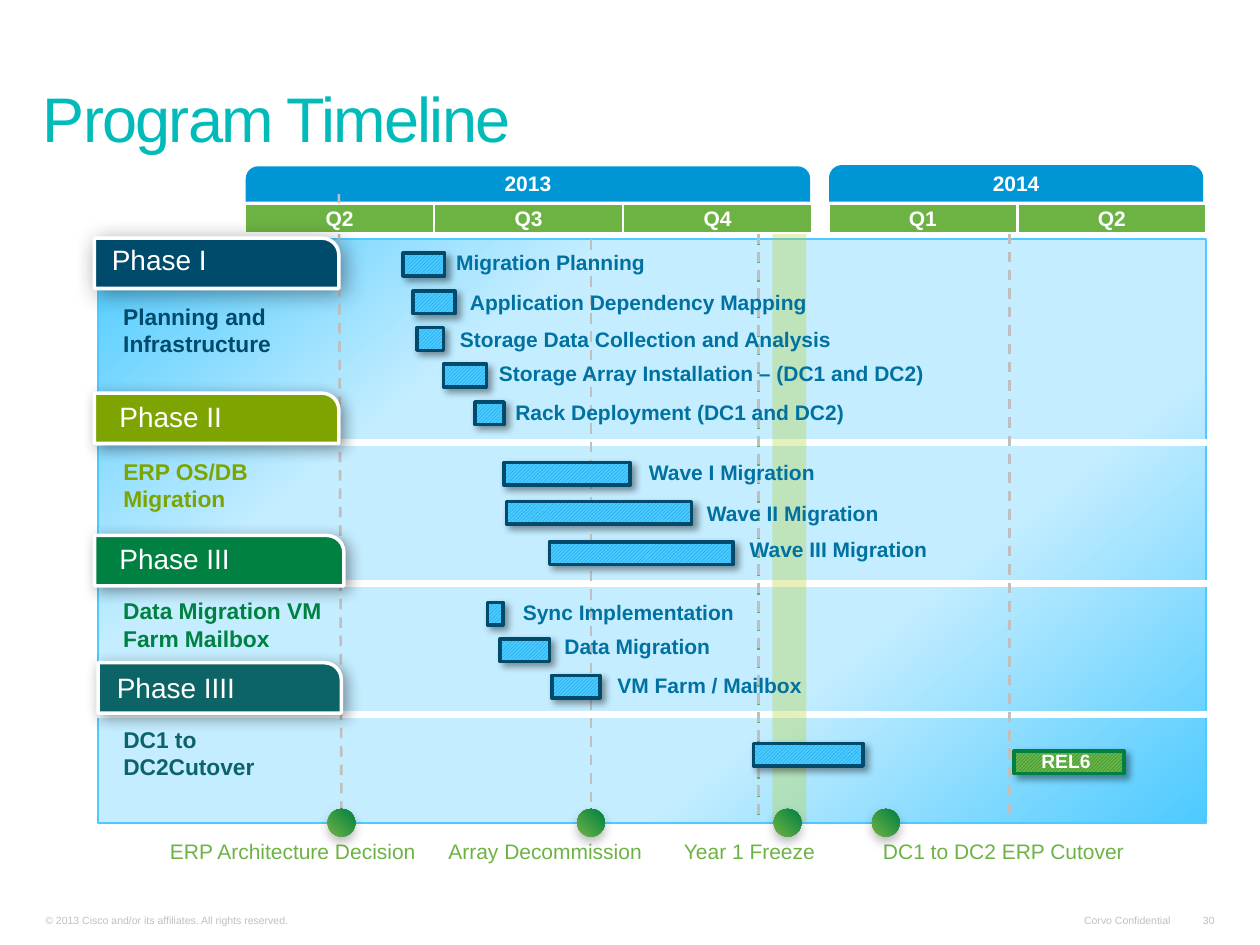
from lxml import etree
from pptx import Presentation
from pptx.dml.color import RGBColor
from pptx.enum.dml import MSO_LINE, MSO_PATTERN
from pptx.enum.shapes import MSO_CONNECTOR, MSO_SHAPE
from pptx.enum.text import MSO_ANCHOR, MSO_AUTO_SIZE, PP_ALIGN
from pptx.oxml.ns import qn
from pptx.util import Pt

PX = 9144  # 100 px to the inch
RECT, OVAL = MSO_SHAPE.RECTANGLE, MSO_SHAPE.OVAL
BAR = MSO_SHAPE.ROUNDED_RECTANGLE
TAG, YEAR_TAB = MSO_SHAPE.ROUND_1_RECTANGLE, MSO_SHAPE.ROUND_2_SAME_RECTANGLE
STRAIGHT, DASH = MSO_CONNECTOR.STRAIGHT, MSO_LINE.DASH
HATCH = MSO_PATTERN.DARK_UPWARD_DIAGONAL
TOP, MIDDLE, BOTTOM = MSO_ANCHOR.TOP, MSO_ANCHOR.MIDDLE, MSO_ANCHOR.BOTTOM
LEFT, CENTER, RIGHT = PP_ALIGN.LEFT, PP_ALIGN.CENTER, PP_ALIGN.RIGHT
FONT = "Arial"
WHITE, GREY, SILVER = "FFFFFF", "BFBFBF", "C0C0C0"
BLUE, SKY, PALE, INK, NAVY = "0096D6", "4DCAFF", "C4EDFF", "0071A0", "004B6B"
GREEN, FOREST, LIME = "6DB344", "008041", "B7D333"
BLUE_BAR, GREEN_BAR = (BLUE, SKY, NAVY), (FOREST, GREEN, FOREST)
WIDE_INSET, SLIM_INSET, NO_INSET = (10, 5), (9, 4), (0, 0)

# Task: label, label x, y, width, then bar x, y, width, all from the phase corner.
PHASES = [
    dict(box=(75, 189, 194, 40), color=NAVY, blur=13, name="Phase I", name_at=(4, 2),
         goal=["Planning and", "Infrastructure"], goal_at=(13, 46, 164, 54), tasks=[
             ("Migration Planning", 287, 9, 207, 245, 12, 33),
             ("Application Dependency Mapping", 298, 41, 317, 253, 42, 33),
             ("Storage Data Collection and Analysis", 290, 70, 363, 256, 71, 21),
             ("Storage Array Installation – (DC1 and DC2)", 321, 97, 495, 277, 100, 34),
             ("Rack Deployment (DC1 and DC2)", 334, 128, 416, 302, 130, 23)]),
    dict(box=(75, 312, 194, 40), color="7DA400", blur=8.8, name="Phase II", name_at=(10, 3),
         goal=["ERP OS/DB", "Migration"], goal_at=(13, 46, 168, 52), tasks=[
             ("Wave I Migration", 440, 53, 400, 325, 55, 100),
             ("Wave II Migration", 486, 85, 400, 327, 86, 147),
             ("Wave III Migration", 520, 114, 400, 361, 118, 146)]),
    dict(box=(75, 425, 198, 40), color=FOREST, blur=8.8, name="Phase III", name_at=(10, 3),
         goal=["Data Migration VM Farm Mailbox"], goal_at=(13, 44, 190, 63), tasks=[
             ("Sync Implementation", 340, 51, 253, 312, 53, 12),
             ("Data Migration", 373, 78, 237, 322, 82, 39),
             ("VM Farm / Mailbox", 415, 109, 221, 363, 111, 38)]),
    dict(box=(78, 526, 193, 40), color="0C6467", blur=8.8, name="Phase IIII", name_at=(5, 4),
         goal=["DC1 to DC2Cutover"], goal_at=(10, 45, 182, 71), tasks=[]),
]
# Milestone: label, label x, label width, dot x.
MILESTONES = [("ERP Architecture Decision", 125, 259, 260), ("Array Decommission", 346, 181, 458),
              ("Year 1 Freeze", 533, 156, 614), ("DC1 to DC2 ERP Cutover", 691, 284, 692)]
YEARS = [((195, 132, 448, 28), "2013", ["Q2", "Q3", "Q4"]),
         ((658, 131, 297, 29), "2014", ["Q1", "Q2"])]


def emu(box):
    return [value * PX for value in box]


def rgb(value):
    return RGBColor.from_string(value)


def set_gradient(fill, element, stops, angle):
    """Fill with (percent, colour) stops; angle runs clockwise."""
    fill.gradient()
    fill.gradient_angle = 360 - angle
    stop_list = next(element.iter(qn("a:gsLst")))
    for stop in list(stop_list):
        stop_list.remove(stop)
    for percent, color in stops:
        stop = etree.SubElement(stop_list, qn("a:gs"), pos=str(percent * 1000))
        etree.SubElement(stop, qn("a:srgbClr"), val=color)


def set_shadow(shape, alpha, blur, angle):
    effects = shape._element.spPr.find(qn("a:effectLst"))
    shadow = etree.SubElement(effects, qn("a:outerShdw"), blurRad=str(int(Pt(blur))),
                              dist=str(Pt(3)), dir=str(angle * 60000), rotWithShape="0")
    color = etree.SubElement(shadow, qn("a:srgbClr"), val="000000")
    etree.SubElement(color, qn("a:alpha"), val=str(alpha * 1000))


def add_block(page, kind, box, fill=None, line=None, width=1, corner=None):
    shape = page.shapes.add_shape(kind, *emu(box))
    shape.shadow.inherit = False
    if corner is not None:
        shape.adjustments[0] = corner
    if fill:
        shape.fill.solid()
        shape.fill.fore_color.rgb = rgb(fill)
    if line:
        shape.line.color.rgb = rgb(line)
        shape.line.width = Pt(width)
    else:
        shape.line.fill.background()
    return shape


def write(shape, lines, size, color, bold=False, align=LEFT, anchor=TOP, inset=WIDE_INSET, wrap=True):
    frame = shape.text_frame
    frame.word_wrap = wrap
    frame.vertical_anchor = anchor
    frame.margin_left = frame.margin_right = inset[0] * PX
    frame.margin_top = frame.margin_bottom = inset[1] * PX
    for index, line in enumerate(lines):
        para = frame.add_paragraph() if index else frame.paragraphs[0]
        para.alignment = align
        span = para.add_run()
        span.text = line
        span.font.name, span.font.size, span.font.bold = FONT, Pt(size), bold
        span.font.color.rgb = rgb(color)
    return frame


def add_text(page, box, lines, size, color, **style):
    return write(page.shapes.add_textbox(*emu(box)), lines, size, color, **style)


def add_line(page, ends, color, width, dash=None):
    line = page.shapes.add_connector(STRAIGHT, *emu(ends))
    line.line.color.rgb = rgb(color)
    line.line.width = Pt(width)
    if dash:
        line.line.dash_style = dash
    etree.SubElement(line._element.spPr, qn("a:effectLst"))


def add_bar(page, x, y, width, colors):
    front, back, edge = colors
    bar = add_block(page, BAR, (x, y, width, 18), line=edge, width=2, corner=0)
    bar.fill.patterned()
    bar.fill.pattern = HATCH
    bar.fill.fore_color.rgb, bar.fill.back_color.rgb = rgb(front), rgb(back)
    set_shadow(bar, 40, 4, 45)


def draw_title(page, box):
    title = page.shapes.title
    title.left, title.top, title.width, title.height = emu(box)
    frame = write(title, ["Program Timeline"], 36, "01BBBB", anchor=BOTTOM, inset=(9, 5))
    frame.auto_size = MSO_AUTO_SIZE.NONE
    para = frame.paragraphs[0]
    para.line_spacing = 0.8
    span = para.runs[0]
    set_gradient(span.font.fill, span._r, [(0, BLUE), (44, "01BBBB"), (100, FOREST)], 80)
    span._r.get_or_add_rPr().set("spc", "-100")


def draw_year(page, box, year):
    left, top, width, height = box
    add_block(page, YEAR_TAB, box, BLUE, corner=0.353)
    add_text(page, (left, top + height - 27, width, 25), [year], 12, WHITE, bold=True,
             align=CENTER, anchor=MIDDLE, inset=SLIM_INSET)


def draw_quarters(page, box, quarters):
    left, top, _, height = box
    for index, quarter in enumerate(quarters):
        cell = add_block(page, RECT, (left + index * 150, top + height + 2, 149, 23), GREEN, WHITE, 0.75)
        write(cell, [quarter], 12, WHITE, bold=True, align=CENTER, anchor=MIDDLE, inset=SLIM_INSET)


def draw_panel(page, box):
    left, top, width, _ = box
    panel = add_block(page, RECT, box, line=SKY)
    set_gradient(panel.fill, panel._element, [(0, SKY), (28, PALE), (69, PALE), (100, SKY)], 51)
    for offset in (161, 273, 377):
        add_line(page, (left - 5, top + offset, left + width + 2, top + offset), WHITE, 4)
    freeze = add_block(page, RECT, (left + 535, top - 19, 27, 481), LIME)
    color = next(freeze._element.spPr.iter(qn("a:srgbClr")))
    etree.SubElement(color, qn("a:alpha"), val="33000")


def draw_date_lines(page):
    for ends, color in [((469, 190, 469, 657), GREY), ((602, 186, 602, 652), GREEN),
                        ((602, 185, 602, 651), GREY), ((801, 185, 801, 651), GREY),
                        ((269, 154, 271, 644), GREY)]:
        add_line(page, ends, color, 1.5, DASH)


def draw_phase(page, box, color, blur, name, name_at, goal, goal_at, tasks):
    left, top, _, _ = box
    x, y, width, height = goal_at
    add_text(page, (left + x, top + y, width, height), goal, 13, color, bold=True)
    for label, x, y, width, bar_x, bar_y, bar_width in tasks:
        add_text(page, (left + x, top + y, width, 20), [label], 12, INK, bold=True, inset=NO_INSET)
        add_bar(page, left + bar_x, top + bar_y, bar_width, BLUE_BAR)
    tag = add_block(page, TAG, box, color, WHITE, 2, corner=0.337)
    set_shadow(tag, 40, blur, 45)
    x, y = name_at
    frame = add_text(page, (left + x, top + y, 180, 35), [name], 16, WHITE)
    frame.paragraphs[0].line_spacing = 0.9
    frame.paragraphs[0].space_after = Pt(6)


def draw_cutover(page, box):
    left, top, _, _ = box
    add_bar(page, left, top, 87, BLUE_BAR)
    add_bar(page, left + 207, top + 6, 87, GREEN_BAR)
    add_text(page, (left + 204, top + 2, 88, 23), ["REL6"], 11, WHITE, bold=True,
             align=CENTER, anchor=MIDDLE)


def draw_milestones(page, top):
    for label, x, width, dot_x in MILESTONES:
        add_text(page, (x, top + 19, width, 30), [label], 12, GREEN)
        dot = add_block(page, OVAL, (dot_x, top, 22, 22))
        set_gradient(dot.fill, dot._element, [(0, GREEN), (100, FOREST)], 315)
        set_shadow(dot, 27, 6, 90)


def draw_footer(page, top):
    for text, x, width, align in [
            ("© 2013 Cisco and/or its affiliates. All rights reserved.", 27, 374, LEFT),
            ("Corvo Confidential", 851, 87, RIGHT), ("30", 945, 28, RIGHT)]:
        add_text(page, (x, top, width, 19), [text], 6, SILVER, align=align, anchor=BOTTOM,
                 inset=SLIM_INSET, wrap=align == LEFT)


def main():
    deck = Presentation()
    deck.slide_width, deck.slide_height = emu((1000, 750))
    page = deck.slides.add_slide(deck.slide_layouts[5])
    draw_title(page, (25, 36, 939, 92))
    draw_footer(page, 720)
    for box, year, _ in YEARS:
        draw_year(page, box, year)
    draw_panel(page, (78, 190, 879, 463))
    draw_date_lines(page)
    for box, _, quarters in YEARS:
        draw_quarters(page, box, quarters)
    for phase in PHASES:
        draw_phase(page, **phase)
    draw_cutover(page, (598, 590, 294, 24))
    draw_milestones(page, 642)
    deck.save("out.pptx")


if __name__ == "__main__":
    main()
